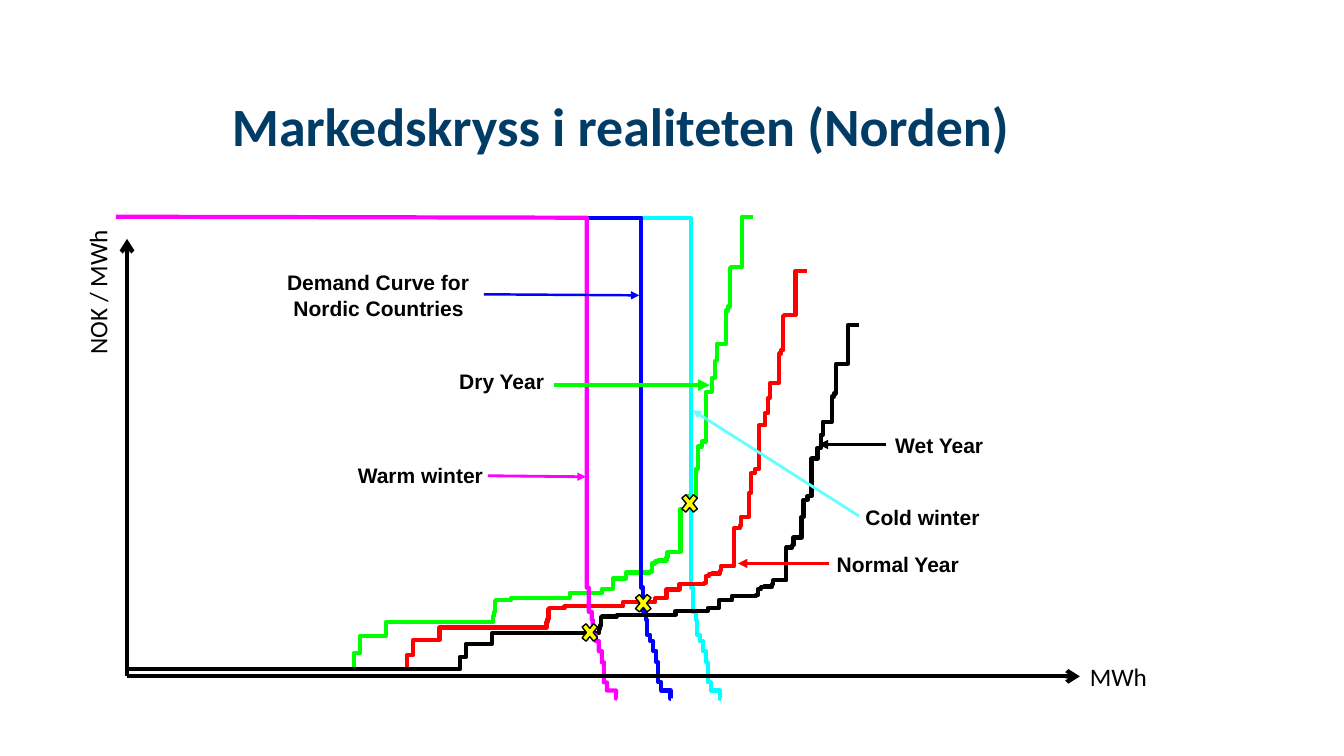
import pptx
import pptx.util
import pptx.dml.color
import pptx.enum.shapes
import pptx.enum.text
import pptx.oxml
import pptx.oxml.ns

Inches, Pt = pptx.util.Inches, pptx.util.Pt
RGB = pptx.dml.color.RGBColor
ALIGN = pptx.enum.text.PP_ALIGN
ANCHOR = pptx.enum.text.MSO_ANCHOR

NAVY = RGB(0x00, 0x3C, 0x65)
BLACK = RGB(0x00, 0x00, 0x00)
GREEN = RGB(0x00, 0xFF, 0x00)
RED = RGB(0xFF, 0x00, 0x00)
BLUE = RGB(0x00, 0x00, 0xFF)
CYAN = RGB(0x00, 0xFF, 0xFF)
PALE_CYAN = RGB(0x65, 0xFF, 0xFF)
MAGENTA = RGB(0xFF, 0x00, 0xFF)
YELLOW = RGB(0xFF, 0xFF, 0x00)

# Supply steps of a dry year: distance along the volume axis, height above base
SUPPLY_STEPS = [
    (2.25, 0.16), (2.31, 0.33), (2.57, 0.47), (3.63, 0.53), (3.64, 0.57),
    (3.65, 0.68), (3.66, 0.69), (3.81, 0.71), (4.39, 0.76), (4.71, 0.80),
    (4.82, 0.90), (4.95, 0.96), (5.19, 0.97), (5.21, 1.05), (5.24, 1.07),
    (5.27, 1.08), (5.35, 1.11), (5.36, 1.16), (5.49, 1.59), (5.55, 1.62),
    (5.56, 1.72), (5.64, 1.99), (5.66, 2.21), (5.70, 2.26), (5.74, 2.75),
    (5.80, 2.89), (5.83, 3.06), (5.85, 3.23), (5.94, 3.56), (5.96, 3.60),
    (5.98, 3.98), (5.99, 3.99), (6.10, 4.49), (6.21, 4.49),
]
# Demand steps: distance right of the vertical drop, depth below the chart top
DEMAND_STEPS = [
    (0, 3.68), (0.02, 3.92), (0.05, 4.00), (0.06, 4.15), (0.09, 4.21),
    (0.12, 4.31), (0.15, 4.42), (0.17, 4.62), (0.20, 4.70), (0.29, 4.78),
    (0.30, 4.78),
]
AXIS_X, AXIS_Y, SUPPLY_BASE = 0.11, 4.56, 4.49


def add_text(s, text, left, top, width, height, size, font, bold=False,
             align=ALIGN.LEFT, inset=None):
    sp = s.shapes.add_textbox(Inches(left), Inches(top), Inches(width), Inches(height))
    tf = sp.text_frame
    tf.word_wrap = False
    if inset is not None:
        tf.margin_left = tf.margin_right = tf.margin_top = tf.margin_bottom = inset
    p = tf.paragraphs[0]
    p.alignment = align
    r = p.add_run()
    r.text = text
    r.font.size, r.font.name, r.font.bold = Pt(size), font, bold
    r.font.color.rgb = BLACK
    return sp


def add_arrow(s, x1, y1, x2, y2, color, weight, head):
    sp = s.shapes.add_connector(pptx.enum.shapes.MSO_CONNECTOR.STRAIGHT,
                                Inches(x1), Inches(y1), Inches(x2), Inches(y2))
    sp.line.color.rgb = color
    sp.line.width = Pt(weight)
    ln = sp.line._get_or_add_ln()
    pptx.oxml.ns.qn("a:tailEnd")
    tail = ln.makeelement(pptx.oxml.ns.qn("a:tailEnd"), {"type": head})
    ln.append(tail)
    ln.addnext(ln.makeelement(pptx.oxml.ns.qn("a:effectLst"), {}))


def add_curve(s, points, color):
    points = [(Inches(x), Inches(y)) for x, y in points]
    fb = s.shapes.build_freeform(*points[0], scale=1.0)
    fb.add_line_segments(points[1:], close=False)
    sp = fb.convert_to_shape()
    sp.shadow.inherit = False
    sp.fill.background()
    sp.line.color.rgb = color
    sp.line.width = Pt(3)


def add_supply(s, left, top, shift, scale, color):
    x0, base = left + AXIS_X, top + SUPPLY_BASE
    points = [(x0, base)]
    for dx, h in SUPPLY_STEPS:
        x = x0 + shift + dx
        points += [(x, points[-1][1]), (x, base - scale * h)]
    add_curve(s, points, color)


def add_demand(s, left, top, start, drop, color, start_y=0.01):
    points = [(left + start, top + start_y), (left + drop, top + 0.01)]
    for dx, depth in DEMAND_STEPS:
        x = left + drop + dx
        points += [(x, points[-1][1]), (x, top + depth)]
    add_curve(s, points, color)


def add_title(s, left, top, width, height):
    sp = s.shapes.title
    sp.left, sp.top, sp.width, sp.height = map(Inches, (left, top, width, height))
    tf = sp.text_frame
    tf.margin_left = tf.margin_right = tf.margin_top = tf.margin_bottom = 0
    tf.vertical_anchor = ANCHOR.BOTTOM
    tf.auto_size = pptx.enum.text.MSO_AUTO_SIZE.NONE
    p = tf.paragraphs[0]
    p.alignment = ALIGN.LEFT
    p.line_spacing = 0.9
    r = p.add_run()
    r.text = "Markedskryss i realiteten (Norden)"
    r.font.size, r.font.name, r.font.bold = Pt(38.5), "Calibri", True
    r.font.color.rgb = NAVY


def add_curves(s, left, top):
    add_supply(s, left, top, 0, 1, GREEN)
    add_demand(s, left, top, 5.21, 5.70, CYAN)
    add_supply(s, left, top, 0.53, 0.88, RED)
    add_demand(s, left, top, 4.68, 5.21, BLUE)
    add_supply(s, left, top, 1.05, 0.76, BLACK)
    add_demand(s, left, top, 0, 4.67, MAGENTA, start_y=0)


def add_callouts(s, left, top):
    # Labels
    for text, x, y, width in [
        ("Demand Curve for", 1.66, 0.52, 1.88),
        ("Nordic Countries", 1.75, 0.78, 1.71),
        ("Normal Year", 7.14, 3.32, 1.23),
        ("Wet Year", 7.72, 2.14, 0.89),
        ("Dry Year", 3.40, 1.51, 0.85),
        ("Warm winter", 2.39, 2.44, 1.26),
        ("Cold winter", 7.43, 2.86, 1.14),
    ]:
        add_text(s, text, left + x, top + y, width, 0.25, 15, "Arial", True,
                 ALIGN.CENTER, 0)
    # Arrows from the labels to their curves
    for x1, y1, x2, y2, color, weight in [
        (3.65, 0.77, 5.19, 0.78, BLUE, 1.75),
        (4.34, 1.67, 5.89, 1.67, GREEN, 2.75),
        (7.07, 3.44, 6.17, 3.44, RED, 2.25),
        (7.64, 2.26, 6.97, 2.26, BLACK, 2.25),
        (3.69, 2.57, 4.66, 2.58, MAGENTA, 2),
        (7.37, 2.97, 5.72, 1.92, PALE_CYAN, 2),
    ]:
        add_arrow(s, left + x1, top + y1, left + x2, top + y2, color, weight, "triangle")


def add_axes(s, left, top):
    x0, y0 = left + AXIS_X, top + AXIS_Y
    add_arrow(s, x0, y0, x0, top + 0.22, BLACK, 3, "arrow")
    add_arrow(s, x0, y0, x0 + 9.45, y0, BLACK, 3, "arrow")
    add_text(s, "MWh", x0 + 9.45, y0 - 0.2, 0.78, 0.4, 18, "Calibri")
    sp = add_text(s, "NOK / MWh", left - 0.91, top + 0.54, 1.45, 0.4, 18, "Calibri")
    sp.rotation = 270


def add_crossings(s, left, top):
    for x, y in [(4.59, 3.99), (5.12, 3.70), (5.58, 2.71)]:
        sp = s.shapes.add_shape(pptx.enum.shapes.MSO_SHAPE.MATH_MULTIPLY,
                                Inches(left + x), Inches(top + y),
                                Inches(0.22), Inches(0.27))
        sp.shadow.inherit = False
        sp.fill.solid()
        sp.fill.fore_color.rgb = YELLOW
        sp.line.color.rgb = BLACK
        sp.line.width = Pt(1)


def main():
    prs = pptx.Presentation()
    prs.slide_width, prs.slide_height = Inches(13.33), Inches(7.5)
    s = prs.slides.add_slide(prs.slide_layouts[5])
    add_title(s, 2.3, 0.42, 10.29, 1.15)
    for add_part in (add_curves, add_callouts, add_axes, add_crossings):
        add_part(s, 1.15, 2.15)
    prs.save("out.pptx")


if __name__ == "__main__":
    main()
